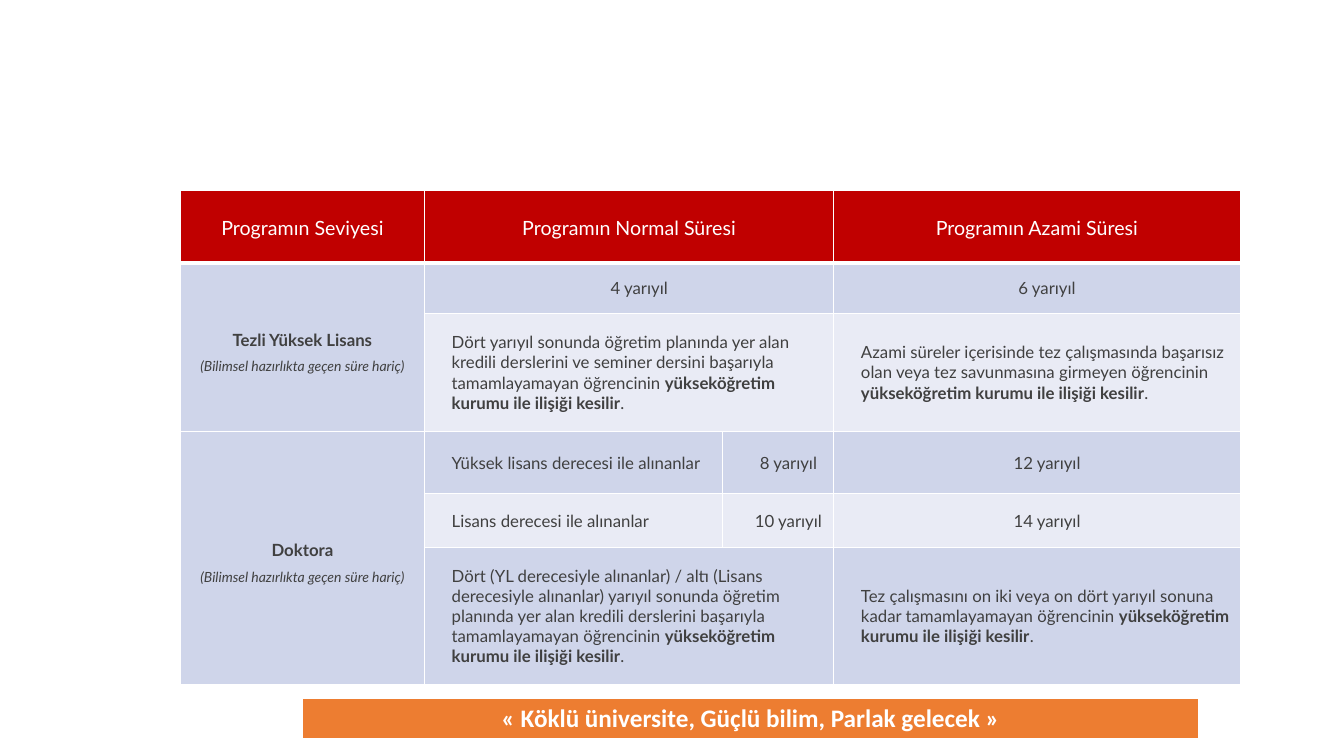
from dataclasses import dataclass

from lxml import etree
from pptx import Presentation
from pptx import util as u
from pptx.dml.color import RGBColor
from pptx.enum import text
from pptx.oxml import ns


@dataclass(frozen=True)
class Theme:
    white: str = "FFFFFF"
    red: str = "C00000"
    orange: str = "ED7D31"
    ink: str = "404040"
    band: str = "CFD5EA"
    pale: str = "E9EBF5"
    table_font: str = "Lato"
    banner_font: str = "Calibri"
    header_size: int = 14
    body_size: int = 12
    note_size: int = 10
    banner_size: int = 18
    thin: int = 1
    thick: int = 3


THEME = Theme()
CENTER = text.PP_ALIGN.CENTER
LEFT = text.PP_ALIGN.LEFT

# Duration table contents
COLUMNS = [2.42, 2.96, 1.1, 4.03]
ROWS = [0.72, 0.5, 1.17, 0.62, 0.53, 1.36]
HEADERS = {0: "Programın Seviyesi", 1: "Programın Normal Süresi", 3: "Programın Azami Süresi"}
LEVELS = {1: "Tezli Yüksek Lisans", 3: "Doktora"}
LEVEL_NOTE = "(Bilimsel hazırlıkta geçen süre hariç)"
DURATIONS = {(1, 1): "4 yarıyıl", (1, 3): "6 yarıyıl", (3, 2): "8 yarıyıl",
             (3, 3): "12 yarıyıl", (4, 2): "10 yarıyıl", (4, 3): "14 yarıyıl"}
ENTRY_DEGREES = {(3, 1): "Yüksek lisans derecesi ile alınanlar",
                 (4, 1): "Lisans derecesi ile alınanlar"}
DISMISSAL = "yükseköğretim kurumu ile ilişiği kesilir"
DISMISSAL_RULES = {
    (2, 1): "Dört yarıyıl sonunda öğretim planında yer alan kredili derslerini ve "
            "seminer dersini başarıyla tamamlayamayan öğrencinin ",
    (2, 3): "Azami süreler içerisinde tez çalışmasında başarısız olan veya tez "
            "savunmasına girmeyen öğrencinin ",
    (5, 1): "Dört (YL derecesiyle alınanlar) / altı (Lisans derecesiyle alınanlar) "
            "yarıyıl sonunda öğretim planında yer alan kredili derslerini başarıyla "
            "tamamlayamayan öğrencinin ",
    (5, 3): "Tez çalışmasını on iki veya on dört yarıyıl sonuna kadar "
            "tamamlayamayan öğrencinin ",
}
MERGES = [((0, 1), (0, 2)), ((1, 0), (2, 0)), ((1, 1), (1, 2)),
          ((2, 1), (2, 2)), ((3, 0), (5, 0)), ((5, 1), (5, 2))]


def add_plain_table(slide, left, top, columns, rows):
    frame = slide.shapes.add_table(len(rows), len(columns), u.Inches(left), u.Inches(top),
                                   u.Inches(sum(columns)), u.Inches(sum(rows)))
    table = frame.table
    table.first_row = table.horz_banding = False
    for column, width in zip(table.columns, columns):
        column.width = u.Inches(width)
    for row, height in zip(table.rows, rows):
        row.height = u.Inches(height)
    return table


def style_cell(cell, fill, top=THEME.thin, bottom=THEME.thin):
    """Draw white borders, then fill the cell."""
    properties = cell._tc.get_or_add_tcPr()
    widths = {"a:lnL": THEME.thin, "a:lnR": THEME.thin, "a:lnT": top, "a:lnB": bottom}
    for tag, width in widths.items():
        line = etree.SubElement(properties, ns.qn(tag), w=str(u.Pt(width)))
        solid = etree.SubElement(line, ns.qn("a:solidFill"))
        etree.SubElement(solid, ns.qn("a:srgbClr"), val=THEME.white)
    cell.fill.solid()
    cell.fill.fore_color.rgb = RGBColor.from_string(fill)


def write_paragraph(paragraph, parts, size, color=THEME.ink, font=THEME.table_font,
                    align=CENTER, spacing=None, indent=0, italic=False):
    """Each part is a (wording, bold) pair."""
    paragraph.alignment = align
    if spacing:
        paragraph.line_spacing = spacing
    if indent:
        properties = paragraph._p.get_or_add_pPr()
        properties.set("marL", str(u.Inches(indent)))
        properties.set("indent", "0")
    for wording, bold in parts:
        run = paragraph.add_run()
        run.text = wording
        run.font.name = font
        run.font.size = u.Pt(size)
        run.font.bold = bold
        run.font.italic = italic
        run.font.color.rgb = RGBColor.from_string(color)


def add_duration_table(slide, left, top):
    table = add_plain_table(slide, left, top, COLUMNS, ROWS)
    for first, last in MERGES:
        table.cell(*first).merge(table.cell(*last))

    # Fills, borders and margins
    for row in range(len(ROWS)):
        for column in range(len(COLUMNS)):
            cell = table.cell(row, column)
            if row == 0:
                fill = THEME.red
            else:
                fill = THEME.band if column == 0 or row % 2 else THEME.pale
            if row == len(ROWS) - 1:
                fill = THEME.band
            style_cell(cell, fill,
                       top=THEME.thick if row == 1 else THEME.thin,
                       bottom=THEME.thick if row == 0 else THEME.thin)
            cell.vertical_anchor = text.MSO_ANCHOR.MIDDLE
            cell.margin_left = cell.margin_right = u.Inches(0.07)
            cell.margin_top = cell.margin_bottom = 0

    # Header row
    for column, header in HEADERS.items():
        write_paragraph(table.cell(0, column).text_frame.paragraphs[0], [(header, False)],
                        THEME.header_size, THEME.white, spacing=1.07)

    # Programme levels
    for row, level in LEVELS.items():
        frame = table.cell(row, 0).text_frame
        write_paragraph(frame.paragraphs[0], [(level, True)], THEME.body_size, spacing=1.5)
        write_paragraph(frame.add_paragraph(), [(LEVEL_NOTE, False)], THEME.note_size,
                        spacing=1.5, italic=True)

    # Durations, entry degrees and dismissal rules
    entries = [(place, [(wording, False)], CENTER) for place, wording in DURATIONS.items()]
    entries += [(place, [(wording, False)], LEFT) for place, wording in ENTRY_DEGREES.items()]
    entries += [(place, [(rule, False), (DISMISSAL, True), (".", False)], LEFT)
                for place, rule in DISMISSAL_RULES.items()]
    for place, parts, align in entries:
        write_paragraph(table.cell(*place).text_frame.paragraphs[0], parts,
                        THEME.body_size, align=align, indent=0.2)


def add_motto_banner(slide, left, top, width, height):
    cell = add_plain_table(slide, left, top, [width], [height]).cell(0, 0)
    style_cell(cell, THEME.orange, bottom=THEME.thick)
    write_paragraph(cell.text_frame.paragraphs[0],
                    [("« Köklü üniversite, Güçlü bilim, Parlak gelecek »", True)],
                    THEME.banner_size, THEME.white, THEME.banner_font)


def main():
    presentation = Presentation()
    presentation.slide_width = u.Inches(13.33)
    presentation.slide_height = u.Inches(7.5)
    slide = presentation.slides.add_slide(presentation.slide_layouts[6])
    add_duration_table(slide, 1.79, 1.89)
    add_motto_banner(slide, 3, 6.93, 8.89, 0.41)
    presentation.save("out.pptx")


if __name__ == "__main__":
    main()
